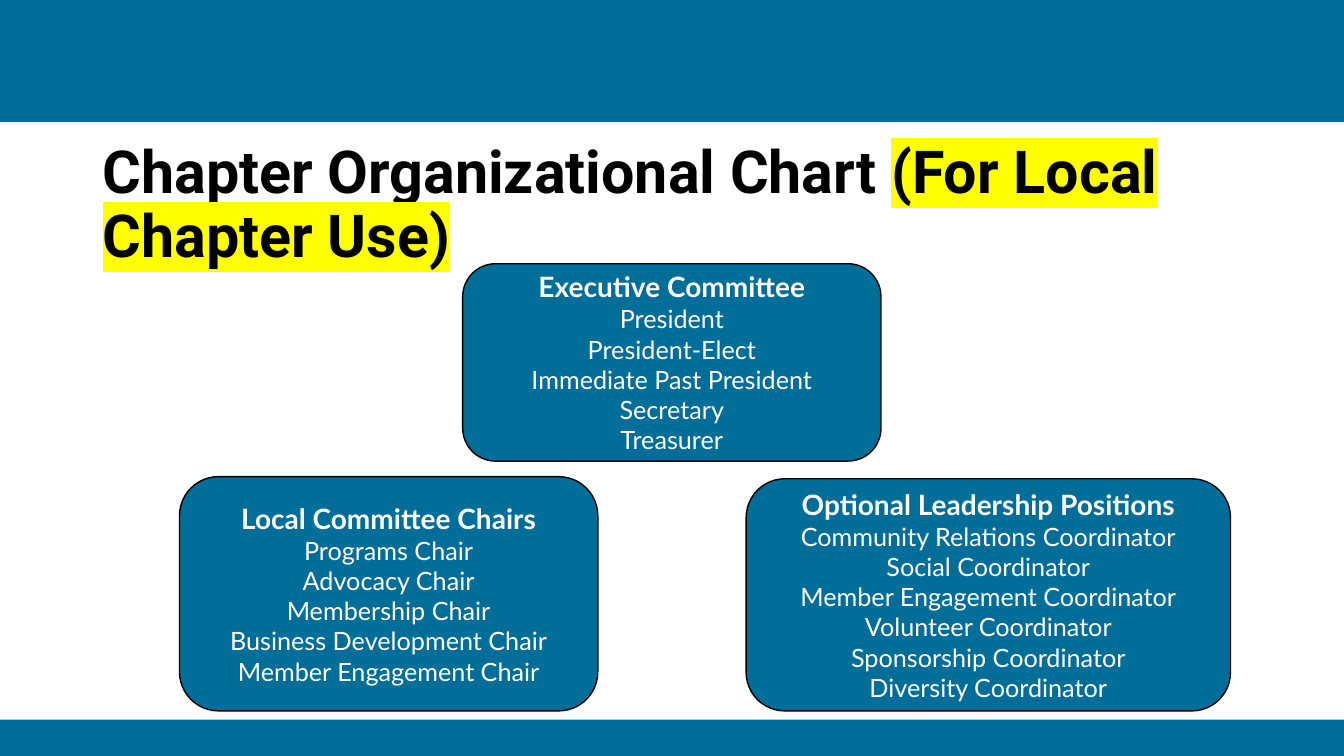
from dataclasses import dataclass

from lxml.etree import SubElement
from pptx import Presentation
from pptx.dml.color import RGBColor
from pptx.enum.shapes import MSO_SHAPE
from pptx.enum.text import MSO_ANCHOR, MSO_AUTO_SIZE, PP_ALIGN
from pptx.oxml.ns import qn
from pptx.shapes.autoshape import Shape
from pptx.slide import Slide
from pptx.text.text import _Paragraph, _Run
from pptx.util import Pt

COLORS = {"blue": "016E99", "black": "000000", "white": "FFFFFF", "yellow": "FFFF00"}
SLIDE_WIDTH, SLIDE_HEIGHT = 960, 540


@dataclass(frozen=True)
class Box:
    left: float
    top: float
    width: float
    height: float


@dataclass(frozen=True)
class Group:
    box: Box
    heading: str
    roles: tuple[str, ...]


BARS = (Box(0, 0, SLIDE_WIDTH, 87.2), Box(0, 514, SLIDE_WIDTH, 26))
TITLE_BOX = Box(66.2, 95, 828, 104.4)
GROUPS = (
    Group(
        Box(330.5, 188.4, 298.8, 141),
        "Executive Committee",
        ("President", "President-Elect", "Immediate Past President", "Secretary", "Treasurer"),
    ),
    Group(
        Box(128.2, 340.5, 298.8, 167.3),
        "Local Committee Chairs",
        (
            "Programs Chair",
            "Advocacy Chair",
            "Membership Chair",
            "Business Development Chair",
            "Member Engagement Chair",
        ),
    ),
    Group(
        Box(533, 342, 346, 165.8),
        "Optional Leadership Positions",
        (
            "Community Relations Coordinator",
            "Social Coordinator",
            "Member Engagement Coordinator",
            "Volunteer Coordinator",
            "Sponsorship Coordinator",
            "Diversity Coordinator",
        ),
    ),
)


def color(name: str) -> RGBColor:
    return RGBColor.from_string(COLORS[name])


def add_run(
    paragraph: _Paragraph, text: str, font_name: str, size: float, color_name: str, bold: bool
) -> _Run:
    run = paragraph.add_run()
    run.text = text
    run.font.name = font_name
    run.font.size = Pt(size)
    run.font.bold = bold
    run.font.color.rgb = color(color_name)
    return run


def highlight(run: _Run, color_name: str) -> None:
    properties = run.font._element if hasattr(run.font, "_element") else run._r.get_or_add_rPr()
    mark = SubElement(properties, qn("a:highlight"))
    SubElement(mark, qn("a:srgbClr"), val=COLORS[color_name])
    properties.find(qn("a:solidFill")).addnext(mark)


def add_blue_shape(slide: Slide, kind: MSO_SHAPE, box: Box) -> Shape:
    shape = slide.shapes.add_shape(
        kind, Pt(box.left), Pt(box.top), Pt(box.width), Pt(box.height)
    )
    shape.shadow.inherit = False
    shape.fill.solid()
    shape.fill.fore_color.rgb = color("blue")
    shape.line.fill.background()
    return shape


def set_title(slide: Slide) -> None:
    title = slide.shapes.title
    title.left, title.top = Pt(TITLE_BOX.left), Pt(TITLE_BOX.top)
    title.width, title.height = Pt(TITLE_BOX.width), Pt(TITLE_BOX.height)
    frame = title.text_frame
    frame.word_wrap = True
    frame.auto_size = MSO_AUTO_SIZE.NONE
    frame.vertical_anchor = MSO_ANCHOR.MIDDLE
    paragraph = frame.paragraphs[0]
    paragraph.alignment = PP_ALIGN.LEFT
    paragraph.line_spacing = 0.9
    add_run(paragraph, "Chapter Organizational Chart ", "Roboto", 42.3, "black", True)
    audience = add_run(paragraph, "(For Local Chapter Use)", "Roboto", 42.3, "black", True)
    highlight(audience, "yellow")


def add_group(slide: Slide, group: Group) -> None:
    shape = add_blue_shape(slide, MSO_SHAPE.ROUNDED_RECTANGLE, group.box)
    shape.line.color.rgb = color("black")
    shape.line.width = Pt(1)
    frame = shape.text_frame
    frame.word_wrap = True
    frame.vertical_anchor = MSO_ANCHOR.MIDDLE
    heading = frame.paragraphs[0]
    heading.alignment = PP_ALIGN.CENTER
    add_run(heading, group.heading, "Lato", 20, "white", True)
    for role in group.roles:
        paragraph = frame.add_paragraph()
        paragraph.alignment = PP_ALIGN.CENTER
        add_run(paragraph, role, "Lato", 18, "white", False)


def main() -> None:
    presentation = Presentation()
    presentation.slide_width = Pt(SLIDE_WIDTH)
    presentation.slide_height = Pt(SLIDE_HEIGHT)
    slide = presentation.slides.add_slide(presentation.slide_layouts[5])
    for bar in BARS:
        add_blue_shape(slide, MSO_SHAPE.RECTANGLE, bar)
    set_title(slide)
    for group in GROUPS:
        add_group(slide, group)
    presentation.save("out.pptx")


if __name__ == "__main__":
    main()
